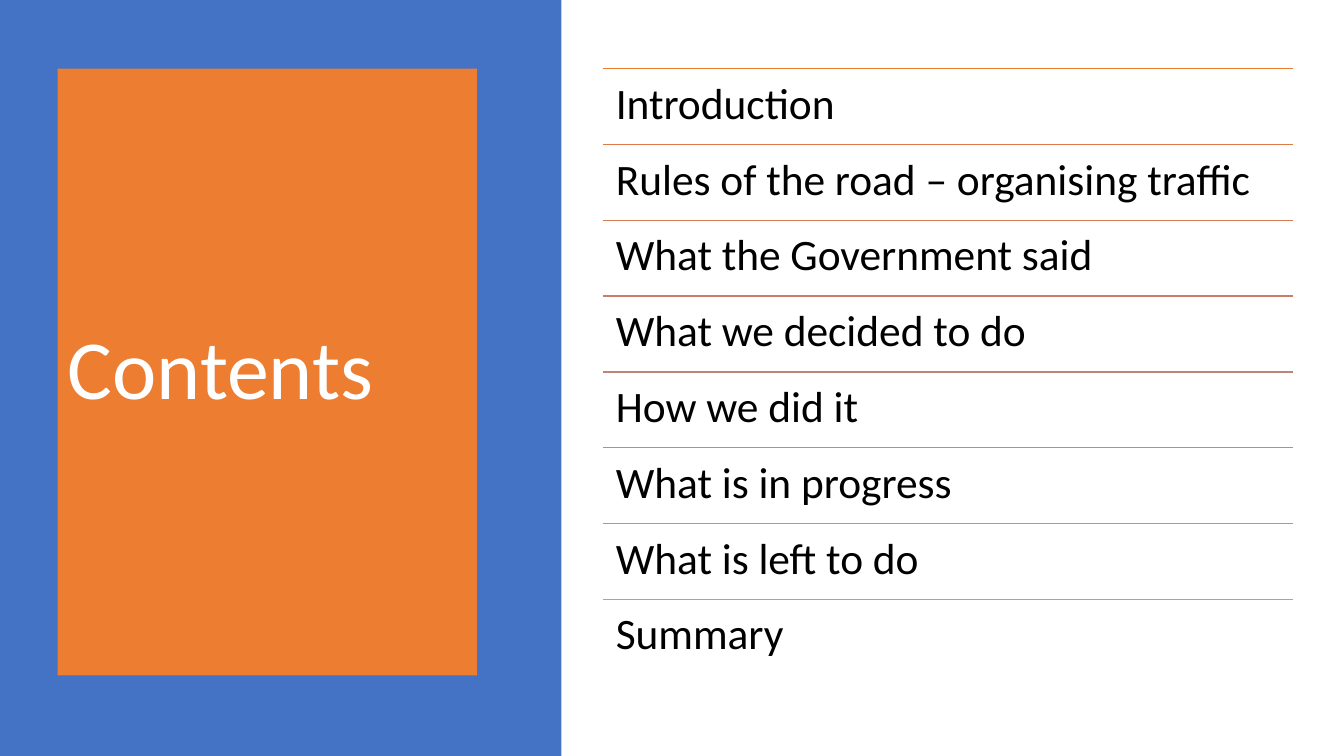
from lxml.etree import SubElement
from pptx import Presentation
from pptx.dml.color import RGBColor
from pptx.enum.shapes import MSO_CONNECTOR, MSO_SHAPE
from pptx.enum.text import MSO_ANCHOR, MSO_AUTO_SIZE, PP_ALIGN
from pptx.oxml.ns import qn
from pptx.util import Cm, Pt

FONT = "Calibri"
MARGIN_TOP = 1.73
LIST_LEFT, LIST_WIDTH, ROW_HEIGHT = 15.19, 17.4, 1.91
TOPICS = [
    ("Introduction", "ED7D31"),
    ("Rules of the road – organising traffic", "E07A44"),
    ("What the Government said", "D57B56"),
    ("What we decided to do", "CA7E67"),
    ("How we did it", "BF8478"),
    ("What is in progress", "B68D88"),
    ("What is left to do", "AD9897"),
    ("Summary", "A5A5A5"),
]
TITLE_FRAME = {
    "word_wrap": True,
    "auto_size": MSO_AUTO_SIZE.NONE,
    "vertical_anchor": MSO_ANCHOR.MIDDLE,
}
TOPIC_FRAME = {
    "word_wrap": True,
    "vertical_anchor": MSO_ANCHOR.TOP,
    "margin_left": Cm(0.33),
    "margin_right": Cm(0.33),
    "margin_top": Cm(0.33),
    "margin_bottom": Cm(0.33),
}
PARAGRAPH = {"alignment": PP_ALIGN.LEFT, "line_spacing": 0.9}


def rgb(value):
    return RGBColor.from_string(value)


def apply_format(target, values):
    for name, value in values.items():
        setattr(target, name, value)


def fill_solid(shape, color):
    shape.fill.solid()
    shape.fill.fore_color.rgb = rgb(color)


def write_text(shape, text, size, color, frame_format):
    frame = shape.text_frame
    apply_format(frame, frame_format)
    paragraph = frame.paragraphs[0]
    apply_format(paragraph, PARAGRAPH)
    run = paragraph.add_run()
    run.text = text
    apply_format(run.font, {"name": FONT, "size": Pt(size), "bold": False})
    run.font.color.rgb = rgb(color)


def add_side_panel(slide, height):
    panel = slide.shapes.add_shape(MSO_SHAPE.RECTANGLE, 0, 0, Cm(14.15), height)
    panel.shadow.inherit = False
    fill_solid(panel, "4472C4")
    panel.line.fill.background()
    return panel


def place_title(slide, panel):
    """Format the title placeholder and stack it above the side panel."""
    title = slide.shapes.title
    apply_format(title, {"left": Cm(1.45), "top": Cm(MARGIN_TOP),
                         "width": Cm(10.57), "height": Cm(15.29)})
    fill_solid(title, "ED7D31")
    write_text(title, "Contents", 60, "FFFFFF", TITLE_FRAME)
    panel._element.addnext(title._element)


def add_rule(shapes, top, color):
    rule = shapes.add_connector(MSO_CONNECTOR.STRAIGHT, Cm(LIST_LEFT), top,
                                Cm(LIST_LEFT + LIST_WIDTH), top)
    rule.line.color.rgb = rgb(color)
    rule.line.width = Pt(1)
    SubElement(rule._element.spPr, qn("a:effectLst"))


def add_topic(shapes, top, topic):
    box = shapes.add_textbox(Cm(LIST_LEFT), top, Cm(LIST_WIDTH), Cm(ROW_HEIGHT))
    write_text(box, topic, 31, "000000", TOPIC_FRAME)


def main():
    presentation = Presentation()
    presentation.slide_width = Cm(33.87)
    presentation.slide_height = Cm(19.05)
    slide = presentation.slides.add_slide(presentation.slide_layouts[5])

    panel = add_side_panel(slide, presentation.slide_height)
    place_title(slide, panel)

    contents = slide.shapes.add_group_shape().shapes
    for row, (topic, rule_color) in enumerate(TOPICS):
        top = Cm(MARGIN_TOP + row * ROW_HEIGHT)
        add_rule(contents, top, rule_color)
        add_topic(contents, top, topic)

    presentation.save("out.pptx")


if __name__ == "__main__":
    main()
